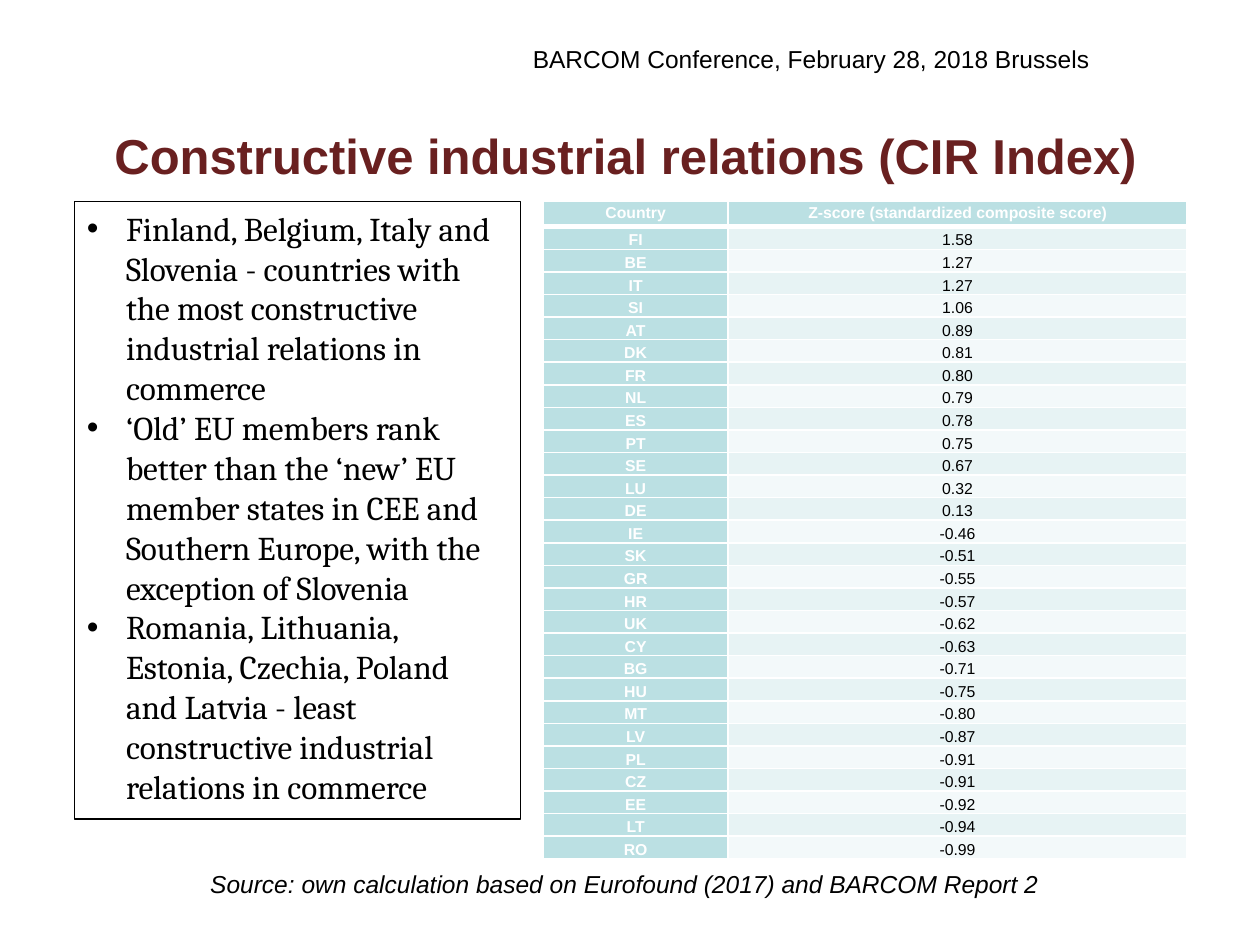
from dataclasses import dataclass

from lxml import etree
from pptx import Presentation
from pptx.dml.color import RGBColor
from pptx.enum import text as t
from pptx.oxml import ns
from pptx.util import Inches, Pt

BLACK = RGBColor(0x00, 0x00, 0x00)
WHITE = RGBColor(0xFF, 0xFF, 0xFF)
MAROON = RGBColor(0x69, 0x20, 0x20)
TEAL = RGBColor(0xBB, 0xE0, 0xE3)
BANDS = (RGBColor(0xE7, 0xF3, 0xF4), RGBColor(0xF3, 0xF9, 0xFA))

FINDINGS = [
    "Finland, Belgium, Italy and Slovenia - countries with the most constructive industrial relations in commerce",
    "‘Old’ EU members rank better than the ‘new’ EU member states in CEE and Southern Europe, with the exception of Slovenia",
    "Romania, Lithuania, Estonia, Czechia, Poland and Latvia - least constructive industrial relations in commerce",
]
HEADINGS = ("Country", "Z-score (standardized composite score)")


@dataclass(frozen=True)
class Score:
    country: str
    z: float


SCORES = [
    Score("FI", 1.58), Score("BE", 1.27), Score("IT", 1.27), Score("SI", 1.06),
    Score("AT", 0.89), Score("DK", 0.81), Score("FR", 0.80), Score("NL", 0.79),
    Score("ES", 0.78), Score("PT", 0.75), Score("SE", 0.67), Score("LU", 0.32),
    Score("DE", 0.13), Score("IE", -0.46), Score("SK", -0.51), Score("GR", -0.55),
    Score("HR", -0.57), Score("UK", -0.62), Score("CY", -0.63), Score("BG", -0.71),
    Score("HU", -0.75), Score("MT", -0.80), Score("LV", -0.87), Score("PL", -0.91),
    Score("CZ", -0.91), Score("EE", -0.92), Score("LT", -0.94), Score("RO", -0.99),
]


def write(frame, *lines: str, size: float, font="Arial", color=BLACK, bold=False,
          italic=False, align=t.PP_ALIGN.LEFT, spacing=1.0, bullet=False) -> None:
    frame.word_wrap = True
    for index, line in enumerate(lines):
        paragraph = frame.paragraphs[0] if index == 0 else frame.add_paragraph()
        paragraph.alignment = align
        paragraph.line_spacing = spacing
        paragraph.space_before = Pt(0)
        if bullet:
            properties = paragraph._p.get_or_add_pPr()
            properties.set("marL", str(Inches(0.31)))
            properties.set("indent", str(-Inches(0.31)))
            etree.SubElement(properties, ns.qn("a:buFont"), typeface="Arial")
            etree.SubElement(properties, ns.qn("a:buChar"), char="•")
        run = paragraph.add_run()
        run.text = line
        run.font.size = Pt(size)
        run.font.name = font
        run.font.color.rgb = color
        run.font.bold = bold
        run.font.italic = italic


def place(shape, left: float, top: float, width: float, height: float) -> None:
    shape.left, shape.top = Inches(left), Inches(top)
    shape.width, shape.height = Inches(width), Inches(height)


def add_label(slide, left: float, top: float, width: float, height: float,
              label: str, italic: bool = False) -> None:
    box = slide.shapes.add_textbox(Inches(left), Inches(top), Inches(width), Inches(height))
    write(box.text_frame, label, size=14, italic=italic)


def set_border(cell, side: str, points: float) -> None:
    line = etree.SubElement(cell._tc.get_or_add_tcPr(), ns.qn(f"a:ln{side}"), w=str(Pt(points)))
    fill = etree.SubElement(line, ns.qn("a:solidFill"))
    etree.SubElement(fill, ns.qn("a:srgbClr"), val=str(WHITE))


def fill_cell(cell, label: str, row: int, heading: bool) -> None:
    cell.margin_left = cell.margin_right = Inches(0.06)
    cell.margin_top = cell.margin_bottom = 0
    cell.vertical_anchor = t.MSO_ANCHOR.BOTTOM if row else t.MSO_ANCHOR.TOP
    widths = {"L": 1, "R": 1, "T": 3 if row == 1 else 1, "B": 1 if row else 3}
    for side, points in widths.items():
        set_border(cell, side, points)
    cell.fill.solid()
    cell.fill.fore_color.rgb = TEAL if heading else BANDS[(row - 1) % 2]
    write(cell.text_frame, label, size=9, color=WHITE if heading else BLACK,
          bold=heading, align=t.PP_ALIGN.CENTER, spacing=1.15)


def add_score_table(slide, scores: list[Score]) -> None:
    rows = [HEADINGS] + [(score.country, f"{score.z:.2f}") for score in scores]
    table = slide.shapes.add_table(len(rows), len(HEADINGS), Inches(4.31), Inches(1.6),
                                   Inches(5.1), Inches(5.22)).table
    for column, width in zip(table.columns, (1.47, 3.64)):
        column.width = Inches(width)
    for r, labels in enumerate(rows):
        table.rows[r].height = Inches((5.22 - 0.2) / len(scores) if r else 0.2)
        for c, label in enumerate(labels):
            fill_cell(table.cell(r, c), label, r, heading=r == 0 or c == 0)


def main() -> None:
    deck = Presentation()
    deck.slide_width, deck.slide_height = Inches(10), Inches(7.5)
    slide = deck.slides.add_slide(deck.slide_layouts[1])

    add_label(slide, 4.13, 0.3, 4.89, 0.34, "BARCOM Conference, February 28, 2018 Brussels")
    add_label(slide, 1.57, 6.85, 6.8, 0.33,
              "Source: own calculation based on Eurofound (2017) and BARCOM Report 2", italic=True)

    title = slide.shapes.title
    place(title, 0.28, 0.76, 9.37, 0.94)
    title.text_frame.auto_size = t.MSO_AUTO_SIZE.NONE
    title.text_frame.vertical_anchor = t.MSO_ANCHOR.MIDDLE
    write(title.text_frame, "Constructive industrial relations (CIR Index)", size=28,
          color=MAROON, bold=True, align=t.PP_ALIGN.CENTER)

    findings = slide.placeholders[1]
    place(findings, 0.59, 1.6, 3.54, 4.9)
    findings.line.color.rgb = BLACK
    findings.line.width = Pt(0.75)
    findings.text_frame.auto_size = t.MSO_AUTO_SIZE.NONE
    write(findings.text_frame, *FINDINGS, size=19, font="Cambria", bullet=True)

    add_score_table(slide, SCORES)
    deck.save("out.pptx")


if __name__ == "__main__":
    main()
